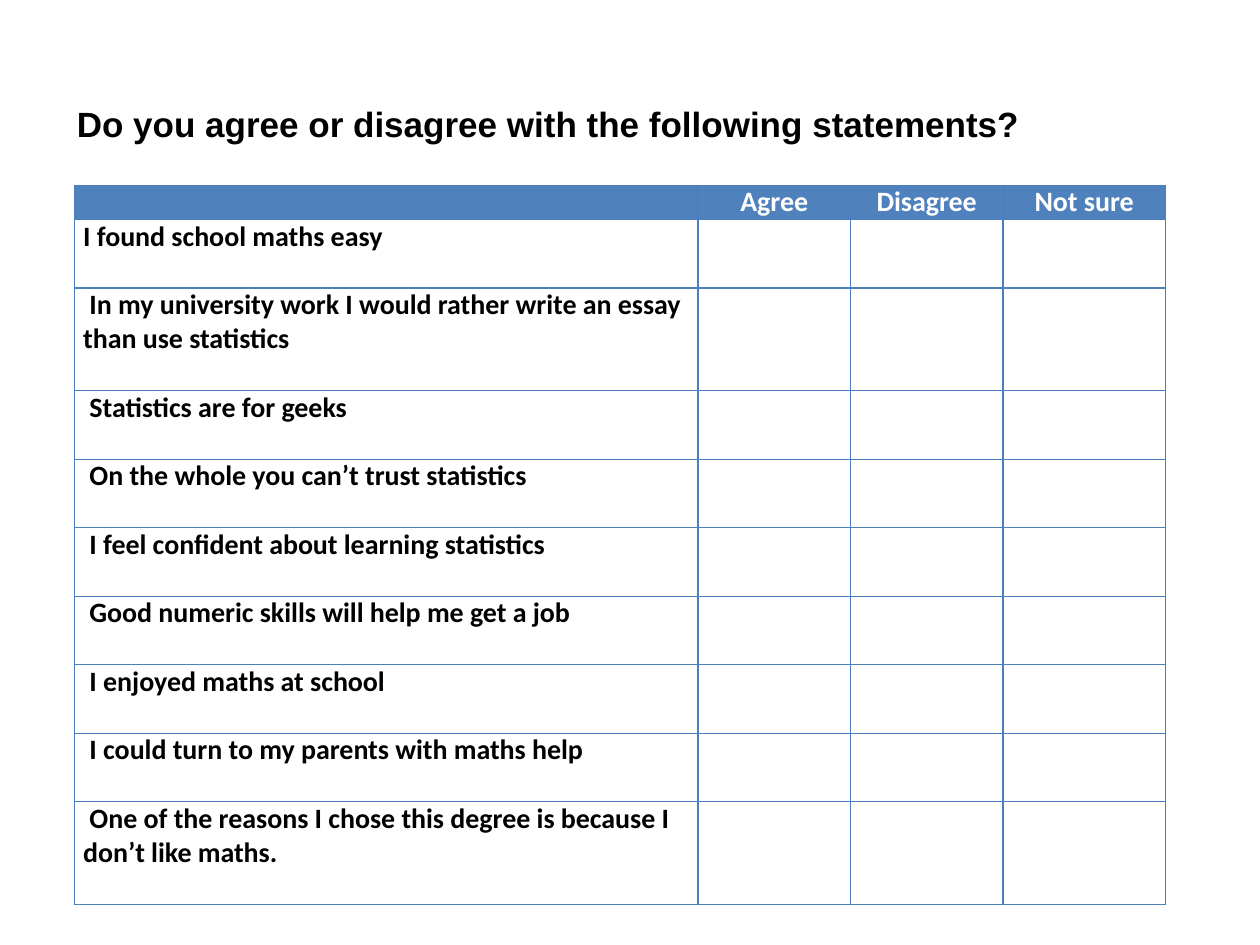
from dataclasses import dataclass

from lxml import etree
from pptx import Presentation
from pptx import util as u
from pptx.dml.color import RGBColor
from pptx.enum import text
from pptx.oxml import ns

TITLE = "Do you agree or disagree with the following statements?"
ANSWERS = ["Agree", "Disagree", "Not sure"]
STATEMENTS = [
    ("I found school maths easy", 2),
    (" In my university work I would rather write an essay than use statistics", 3),
    (" Statistics are for geeks", 2),
    (" On the whole you can’t trust statistics", 2),
    (" I feel confident about learning statistics", 2),
    (" Good numeric skills will help me get a job", 2),
    (" I enjoyed maths at school", 2),
    (" I could turn to my parents with maths help", 2),
    (" One of the reasons I chose this degree is because I don’t like maths.", 3),
]
COL_WIDTHS = [4.95, 1.21, 1.21, 1.29]


@dataclass(frozen=True)
class Theme:
    ink: str = "000000"
    paper: str = "FFFFFF"
    header: str = "4F81BD"
    border: str = "4B7EBC"
    title_font: str = "Arial"
    body_font: str = "Calibri"
    title_size: int = 20
    body_size: int = 16
    border_width: float = 0.75


THEME = Theme()


def style_paragraph(p, name, size, color, align):
    p.alignment = align
    p.font.name = name
    p.font.size = u.Pt(size)
    p.font.bold = True
    p.font.color.rgb = RGBColor.from_string(color)


def add_borders(cell):
    tcPr = cell._tc.get_or_add_tcPr()
    for side in ("lnL", "lnR", "lnT", "lnB"):
        ln = etree.SubElement(tcPr, ns.qn(f"a:{side}"), w=str(u.Pt(THEME.border_width)))
        fill = etree.SubElement(ln, ns.qn("a:solidFill"))
        etree.SubElement(fill, ns.qn("a:srgbClr"), val=THEME.border)


def fill_cell(cell, words, fill, color, align):
    cell.margin_left = cell.margin_right = u.Inches(0.07)
    cell.margin_top = cell.margin_bottom = 0
    cell.vertical_anchor = text.MSO_ANCHOR.TOP
    add_borders(cell)
    cell.fill.solid()
    cell.fill.fore_color.rgb = RGBColor.from_string(fill)
    p = cell.text_frame.paragraphs[0]
    if words:
        p.text = words
    else:
        p._p.get_or_add_endParaRPr().set("sz", str(THEME.body_size * 100))
    style_paragraph(p, THEME.body_font, THEME.body_size, color, align)


def place_title(s, left, top, width, height):
    sp = s.shapes.title
    sp.left, sp.top, sp.width, sp.height = left, top, width, height
    tf = sp.text_frame
    tf.text = TITLE
    tf.word_wrap = True
    tf.auto_size = text.MSO_AUTO_SIZE.NONE
    tf.vertical_anchor = text.MSO_ANCHOR.MIDDLE
    style_paragraph(tf.paragraphs[0], THEME.title_font, THEME.title_size,
                    THEME.ink, text.PP_ALIGN.LEFT)


def place_survey(s, left, top, width, height):
    rows = [(["", *ANSWERS], 1)]
    rows += [([words, "", "", ""], lines) for words, lines in STATEMENTS]
    table = s.shapes.add_table(len(rows), len(COL_WIDTHS), left, top, width, height).table
    table.horz_banding = False
    for col, share in zip(table.columns, COL_WIDTHS):
        col.width = int(width * share / sum(COL_WIDTHS))
    line_height = height / sum(lines for _, lines in rows)
    for i, (cells, lines) in enumerate(rows):
        table.rows[i].height = int(line_height * lines)
        if i == 0:
            look = THEME.header, THEME.paper, text.PP_ALIGN.CENTER
        else:
            look = THEME.paper, THEME.ink, text.PP_ALIGN.LEFT
        for j, words in enumerate(cells):
            fill_cell(table.cell(i, j), words, *look)


def main():
    prs = Presentation()
    prs.slide_width, prs.slide_height = u.Inches(10), u.Inches(7.5)
    s = prs.slides.add_slide(prs.slide_layouts[5])
    place_title(s, u.Inches(0.51), u.Inches(0.76), u.Inches(7.87), u.Inches(0.44))
    place_survey(s, u.Inches(0.59), u.Inches(1.47), u.Inches(8.66), u.Inches(5.71))
    prs.save("out.pptx")


if __name__ == "__main__":
    main()
